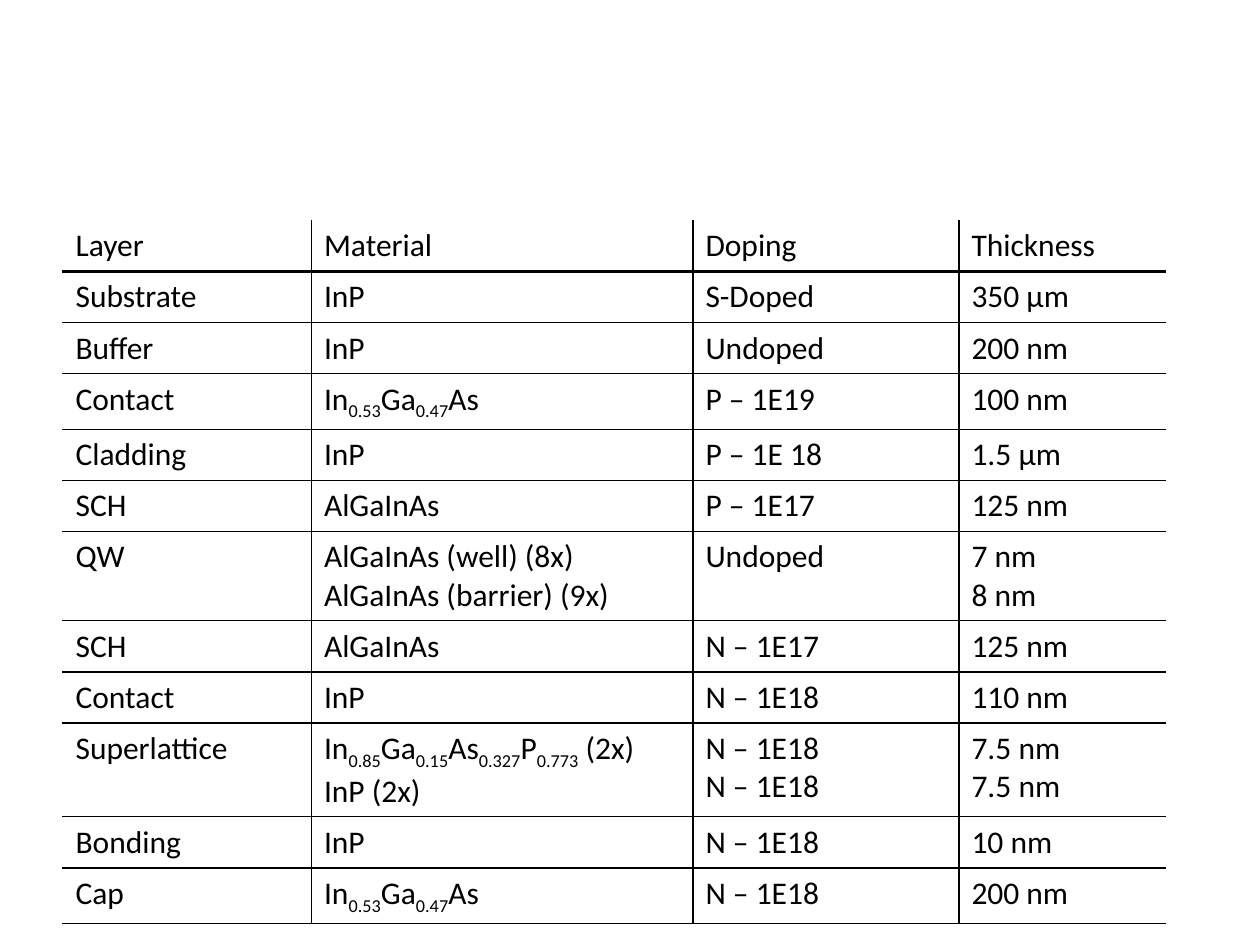
"""Build a slide with a table of semiconductor layers, their materials, doping and thickness."""
from pptx import Presentation, util as u
from pptx.dml.color import RGBColor
from pptx.oxml import parse_xml
from pptx.oxml.ns import nsdecls

COLORS = {"ink": "000000"}
FONT = "Calibri"
COLUMN_WIDTHS = [142, 218, 152, 118]
ROW_HEIGHT = 29.2
THIN, THICK = 0.75, 2.25
LAYERS = [
    ("Layer", "Material", "Doping", "Thickness"),
    ("Substrate", "InP", "S-Doped", "350 μm"),
    ("Buffer", "InP", "Undoped", "200 nm"),
    ("Contact", "In_0.53_Ga_0.47_As", "P – 1E19", "100 nm"),
    ("Cladding", "InP", "P – 1E 18", "1.5 μm"),
    ("SCH", "AlGaInAs", "P – 1E17", "125 nm"),
    ("QW", "AlGaInAs (well) (8x)\nAlGaInAs (barrier) (9x)", "Undoped", "7 nm\n8 nm"),
    ("SCH", "AlGaInAs", "N – 1E17", "125 nm"),
    ("Contact", "InP", "N – 1E18", "110 nm"),
    ("Superlattice", "In_0.85_Ga_0.15_As_0.327_P_0.773_ (2x)\nInP (2x)",
     "N – 1E18\nN – 1E18", "7.5 nm\n7.5 nm"),
    ("Bonding", "InP", "N – 1E18", "10 nm"),
    ("Cap", "In_0.53_Ga_0.47_As", "N – 1E18", "200 nm"),
]


def write_formula(paragraph, formula):
    """Add the formula as runs, with the parts between underscores as subscripts."""
    for index, part in enumerate(formula.split("_")):
        run = paragraph.add_run()
        run.text = part
        run.font.name = FONT
        run.font.size = u.Pt(18)
        run.font.color.rgb = RGBColor.from_string(COLORS["ink"])
        if index % 2:
            run.font._element.set("baseline", "-25000")


def set_borders(cell, widths):
    """Draw the given sides of a cell, keyed L, R, T and B in that order."""
    properties = cell._tc.get_or_add_tcPr()
    for position, (side, width) in enumerate(widths.items()):
        properties.insert(position, parse_xml(
            f'<a:ln{side} {nsdecls("a")} w="{u.Pt(width)}"><a:solidFill>'
            f'<a:srgbClr val="{COLORS["ink"]}"/></a:solidFill></a:ln{side}>'))


presentation = Presentation()
presentation.slide_width, presentation.slide_height = u.Pt(720), u.Pt(540)
slide = presentation.slides.add_slide(presentation.slide_layouts[6])
table_frame = slide.shapes.add_table(
    len(LAYERS), len(COLUMN_WIDTHS), u.Pt(36), u.Pt(126), u.Pt(630), u.Pt(393))
table = table_frame.table
table.first_row = False
table.horz_banding = False

for column, width in zip(table.columns, COLUMN_WIDTHS):
    column.width = u.Pt(width)

for row_index, layer in enumerate(LAYERS):
    table.rows[row_index].height = u.Pt(ROW_HEIGHT)
    for column_index, content in enumerate(layer):
        cell = table.cell(row_index, column_index)
        cell.fill.background()
        for line_index, line in enumerate(content.split("\n")):
            text_frame = cell.text_frame
            paragraph = text_frame.add_paragraph() if line_index else text_frame.paragraphs[0]
            write_formula(paragraph, line)
        borders = {}
        if column_index > 0:
            borders["L"] = THIN
        if column_index < len(COLUMN_WIDTHS) - 1:
            borders["R"] = THIN
        if row_index > 0:
            borders["T"] = THICK if row_index == 1 else THIN
        borders["B"] = THICK if row_index == 0 else THIN
        set_borders(cell, borders)

table_frame.height = u.Pt(393)
presentation.save("out.pptx")
